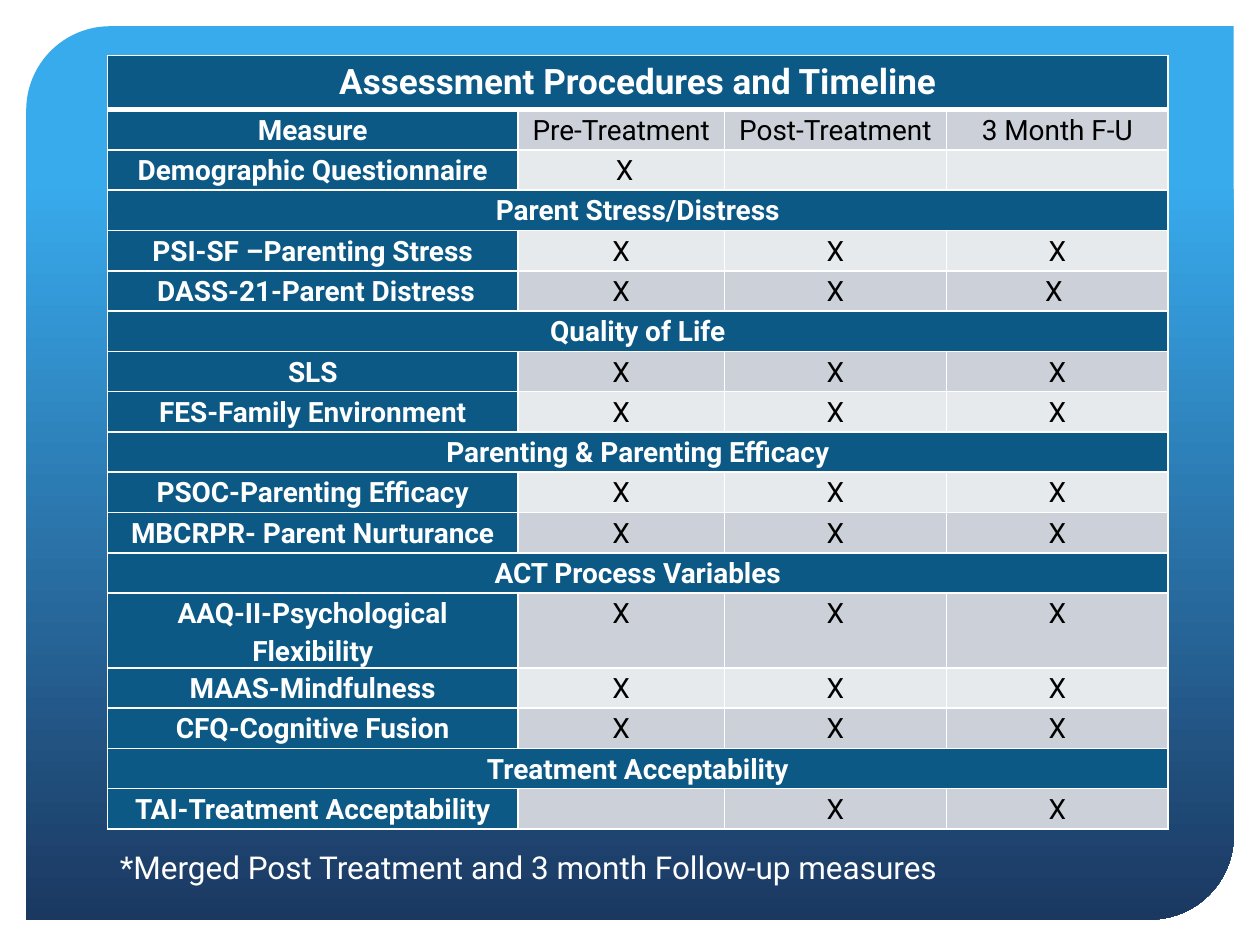
from lxml import etree
from pptx import Presentation
from pptx.dml.color import RGBColor
from pptx.enum.shapes import MSO_SHAPE
from pptx.enum.text import MSO_AUTO_SIZE, PP_ALIGN
from pptx.oxml.ns import qn
from pptx.util import Pt

PANEL_SHAPE = MSO_SHAPE.ROUND_2_DIAG_RECTANGLE
CENTER = PP_ALIGN.CENTER
LEFT = PP_ALIGN.LEFT
GROW = MSO_AUTO_SIZE.SHAPE_TO_FIT_TEXT

WHITE = RGBColor(0xFF, 0xFF, 0xFF)
BLACK = RGBColor(0, 0, 0)
SKY = RGBColor(0x38, 0xAB, 0xED)
NAVY = RGBColor(0x1B, 0x38, 0x61)
TEAL = RGBColor(0x0C, 0x59, 0x86)
BANDS = (RGBColor(0xE7, 0xEA, 0xED), RGBColor(0xCC, 0xD1, 0xD9))

FONT = "Roboto"
COLUMN_WIDTHS = (234.6, 118, 126.8, 126.8)
TITLE_HEIGHT = 31
ROW_HEIGHT = 23.04

ALL_TIMES = ("X", "X", "X")
# A row with a single entry is a heading across the whole table.
ROWS = (
    ("Assessment Procedures and Timeline",),
    ("Measure", "Pre-Treatment", "Post-Treatment", "3 Month F-U"),
    ("Demographic Questionnaire", " X", "", ""),
    ("Parent Stress/Distress",),
    ("PSI-SF –Parenting Stress", *ALL_TIMES),
    (" DASS-21-Parent Distress", "X", "X", "X "),
    ("Quality of Life",),
    ("SLS", *ALL_TIMES),
    ("FES-Family Environment", *ALL_TIMES),
    ("Parenting & Parenting Efficacy",),
    ("PSOC-Parenting Efficacy", *ALL_TIMES),
    ("MBCRPR- Parent Nurturance", *ALL_TIMES),
    ("ACT Process Variables",),
    ("AAQ-II-Psychological Flexibility", *ALL_TIMES),
    ("MAAS-Mindfulness", *ALL_TIMES),
    ("CFQ-Cognitive Fusion", *ALL_TIMES),
    ("Treatment Acceptability",),
    ("TAI-Treatment Acceptability", "", "X", "X"),
)


def write_text(frame, text, size=16, color=WHITE, bold=False, align=LEFT, spacing=None):
    para = frame.paragraphs[0]
    para.alignment = align
    para.line_spacing = spacing
    if not text:
        # Keeps an empty cell from taking the taller default size.
        etree.SubElement(para._p, qn("a:endParaRPr"), sz=str(size * 100))
        return
    span = para.add_run()
    span.text = text
    span.font.name = FONT
    span.font.size = Pt(size)
    span.font.bold = bold
    span.font.color.rgb = color


def add_panel(page):
    panel = page.shapes.add_shape(PANEL_SHAPE, Pt(15), Pt(15), Pt(690), Pt(510.5))
    panel.shadow.inherit = False
    panel.adjustments[0] = 0.094
    panel.adjustments[1] = 0
    panel.line.fill.background()
    panel.fill.gradient()
    panel.fill.gradient_angle = 270
    for stop, position, color in zip(panel.fill.gradient_stops, (0.17, 1), (SKY, NAVY)):
        stop.position = position
        stop.color.rgb = color


def set_borders(cell, **widths):
    """Draw white borders; widths maps the sides L, R, T and B to points."""
    properties = cell._tc.get_or_add_tcPr()
    for side, width in widths.items():
        line = etree.SubElement(properties, qn(f"a:ln{side}"), w=str(Pt(width)))
        fill = etree.SubElement(line, qn("a:solidFill"))
        etree.SubElement(fill, qn("a:srgbClr"), val=str(WHITE))


def format_cell(cell, row_index, color):
    cell.margin_left = cell.margin_right = Pt(4.32)
    cell.margin_top = cell.margin_bottom = 0
    set_borders(cell, L=1, R=1, T=3 if row_index == 1 else 1, B=3 if row_index == 0 else 1)
    cell.fill.solid()
    cell.fill.fore_color.rgb = color


def add_timeline_table(page):
    height = TITLE_HEIGHT + ROW_HEIGHT * (len(ROWS) - 1)
    table = page.shapes.add_table(
        len(ROWS), len(COLUMN_WIDTHS), Pt(61.4), Pt(31.7), Pt(sum(COLUMN_WIDTHS)), Pt(height)
    ).table
    for column, width in zip(table.columns, COLUMN_WIDTHS):
        column.width = Pt(width)
    for row_index, entries in enumerate(ROWS):
        is_title = row_index == 0
        is_heading = len(entries) == 1
        table.rows[row_index].height = Pt(TITLE_HEIGHT if is_title else ROW_HEIGHT)
        cells = list(table.rows[row_index].cells)
        if is_heading:
            cells[0].merge(cells[-1])
        for column_index, cell in enumerate(cells):
            is_dark = is_heading or column_index == 0
            format_cell(cell, row_index, TEAL if is_dark else BANDS[row_index % 2])
        for column_index, text in enumerate(entries):
            is_label = column_index == 0
            write_text(
                cells[column_index].text_frame, text, size=20 if is_title else 16,
                color=WHITE if is_label else BLACK, bold=is_label, align=CENTER, spacing=1.15,
            )


def add_footnote(page):
    box = page.shapes.add_textbox(Pt(61.4), Pt(481), Pt(597), Pt(29))
    box.text_frame.word_wrap = True
    box.text_frame.auto_size = GROW
    write_text(box.text_frame, "*Merged Post Treatment and 3 month Follow-up measures", size=18)


def main():
    deck = Presentation()
    deck.slide_width = Pt(720)
    deck.slide_height = Pt(540)
    page = deck.slides.add_slide(deck.slide_layouts[6])
    add_panel(page)
    add_timeline_table(page)
    add_footnote(page)
    deck.save("out.pptx")


if __name__ == "__main__":
    main()
